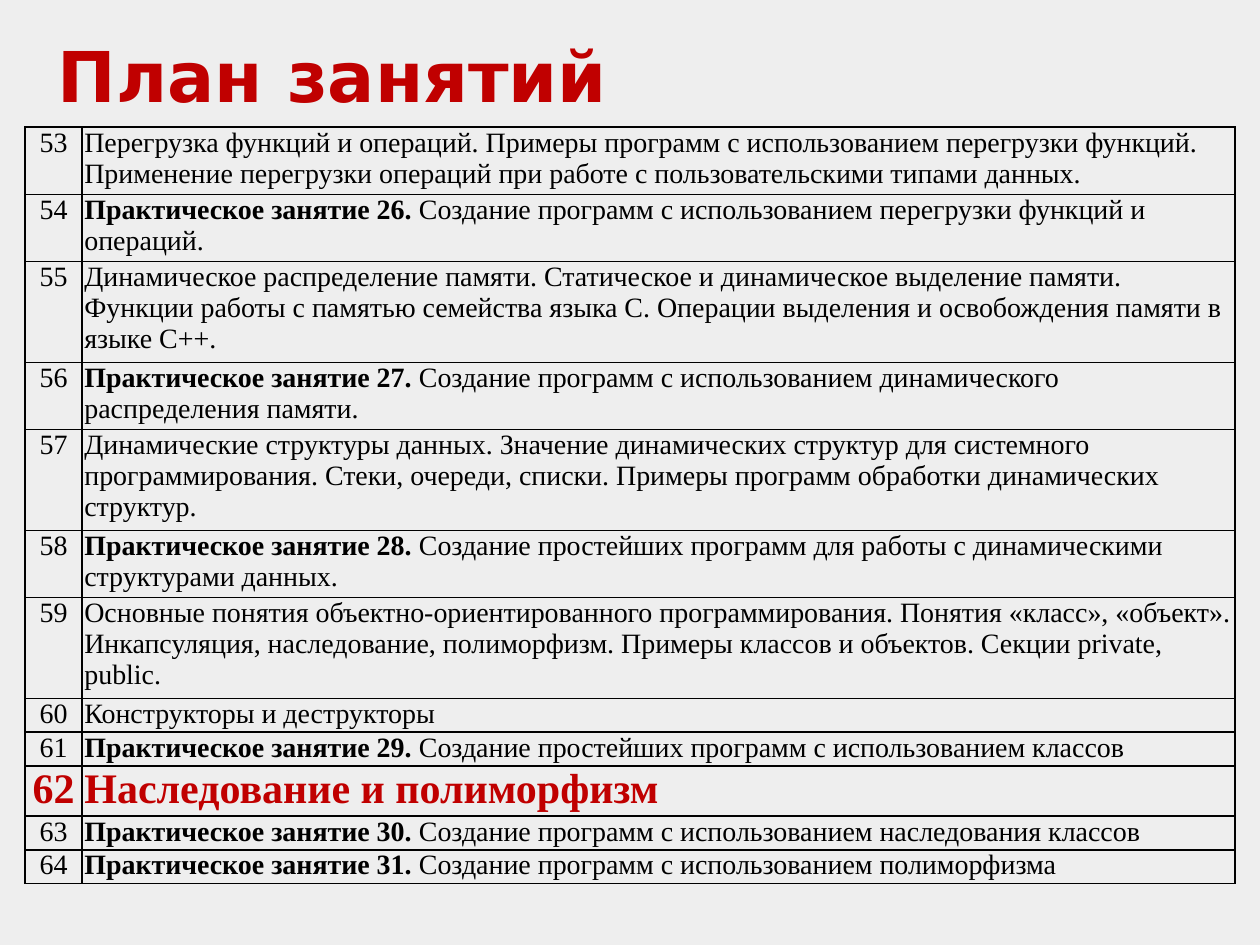
import dataclasses

import lxml.etree
import pptx
import pptx.dml.color
import pptx.enum.text
import pptx.oxml.ns
import pptx.util

Inches = pptx.util.Inches
ALIGN = pptx.enum.text.PP_ALIGN


@dataclasses.dataclass(frozen=True)
class Theme:
    background: str = "EEEEEE"
    accent: str = "C00000"
    ink: str = "000000"
    title_font: str = "DejaVu Sans"
    table_font: str = "Times New Roman"
    title_size: int = 40
    body_size: int = 16
    current_size: int = 24
    border_width: int = 1
    line_spacing: float = 1.2


FIRST_LESSON = 53
CURRENT_LESSON = 62

# Practical class number (None for a lecture), topic, lines the topic takes
LESSONS = [
    (None, "Перегрузка функций и операций. Примеры программ с использованием перегрузки функций. "
           "Применение перегрузки операций при работе с пользовательскими типами данных.", 2),
    (26, "Создание программ с использованием перегрузки функций и операций.", 2),
    (None, "Динамическое распределение памяти. Статическое и динамическое выделение памяти. "
           "Функции работы с памятью семейства языка C. "
           "Операции выделения и освобождения памяти в языке C++.", 3),
    (27, "Создание программ с использованием динамического распределения памяти.", 2),
    (None, "Динамические структуры данных. Значение динамических структур для системного "
           "программирования. Стеки, очереди, списки. "
           "Примеры программ обработки динамических структур.", 3),
    (28, "Создание простейших программ для работы с динамическими структурами данных.", 2),
    (None, "Основные понятия объектно-ориентированного программирования. "
           "Понятия «класс», «объект». Инкапсуляция, наследование, полиморфизм. "
           "Примеры классов и объектов. Секции private, public.", 3),
    (None, "Конструкторы и деструкторы", 1),
    (29, "Создание простейших программ с использованием классов", 1),
    (None, "Наследование и полиморфизм", 1),
    (30, "Создание программ с использованием наследования классов", 1),
    (31, "Создание программ с использованием полиморфизма", 1),
]


def add_span(para, text, *, font, size, color, bold=False):
    span = para.add_run()
    span.text = text
    span.font.name = font
    span.font.size = pptx.util.Pt(size)
    span.font.bold = bold
    span.font.color.rgb = pptx.dml.color.RGBColor.from_string(color)


def set_borders(cell, color, width):
    properties = cell._tc.get_or_add_tcPr()
    qn = pptx.oxml.ns.qn
    for index, side in enumerate(("a:lnL", "a:lnR", "a:lnT", "a:lnB")):
        line = lxml.etree.Element(qn(side), w=str(pptx.util.Pt(width)))
        fill = lxml.etree.SubElement(line, qn("a:solidFill"))
        lxml.etree.SubElement(fill, qn("a:srgbClr"), val=color)
        properties.insert(index, line)


class PlanPage:
    def __init__(self, deck, theme):
        self.theme = theme
        self.page = deck.slides.add_slide(deck.slide_layouts[6])
        fill = self.page.background.fill
        fill.solid()
        fill.fore_color.rgb = pptx.dml.color.RGBColor.from_string(theme.background)

    def title(self, text, left, top, width, height):
        box = self.page.shapes.add_textbox(left, top, width, height)
        frame = box.text_frame
        frame.word_wrap = True
        frame.auto_size = pptx.enum.text.MSO_AUTO_SIZE.SHAPE_TO_FIT_TEXT
        add_span(frame.paragraphs[0], text, font=self.theme.title_font,
                 size=self.theme.title_size, color=self.theme.accent, bold=True)

    def cell(self, cell, spans, align, size, color):
        cell.fill.background()
        cell.margin_left = cell.margin_right = Inches(0.02)
        cell.margin_top = cell.margin_bottom = 0
        set_borders(cell, self.theme.ink, self.theme.border_width)
        para = cell.text_frame.paragraphs[0]
        para.alignment = align
        for text, bold in spans:
            add_span(para, text, font=self.theme.table_font, size=size, color=color, bold=bold)

    def lesson_table(self, lessons, left, top, widths, height):
        frame = self.page.shapes.add_table(
            len(lessons), len(widths), left, top, sum(widths), height)
        table = frame.table
        table.first_row = table.horz_banding = False
        for column, width in zip(table.columns, widths):
            column.width = width

        for index, (practice, topic, lines) in enumerate(lessons):
            number = FIRST_LESSON + index
            current = number == CURRENT_LESSON
            size = self.theme.current_size if current else self.theme.body_size
            color = self.theme.accent if current else self.theme.ink
            spans = [(topic, current)]
            if practice:
                spans = [(f"Практическое занятие {practice}.", True), (f" {topic}", False)]
            table.rows[index].height = pptx.util.Pt(lines * size * self.theme.line_spacing)
            self.cell(table.cell(index, 0), [(str(number), current)], ALIGN.CENTER, size, color)
            self.cell(table.cell(index, 1), spans, ALIGN.LEFT, size, color)


def main():
    deck = pptx.Presentation()
    deck.slide_width, deck.slide_height = Inches(10), Inches(7.5)
    plan = PlanPage(deck, Theme())
    plan.title("План занятий", Inches(0.36), Inches(0.21), Inches(9.28), Inches(0.77))
    plan.lesson_table(LESSONS, Inches(0.2), Inches(1.01),
                      (Inches(0.45), Inches(9.15)), Inches(6))
    deck.save("out.pptx")


if __name__ == "__main__":
    main()
